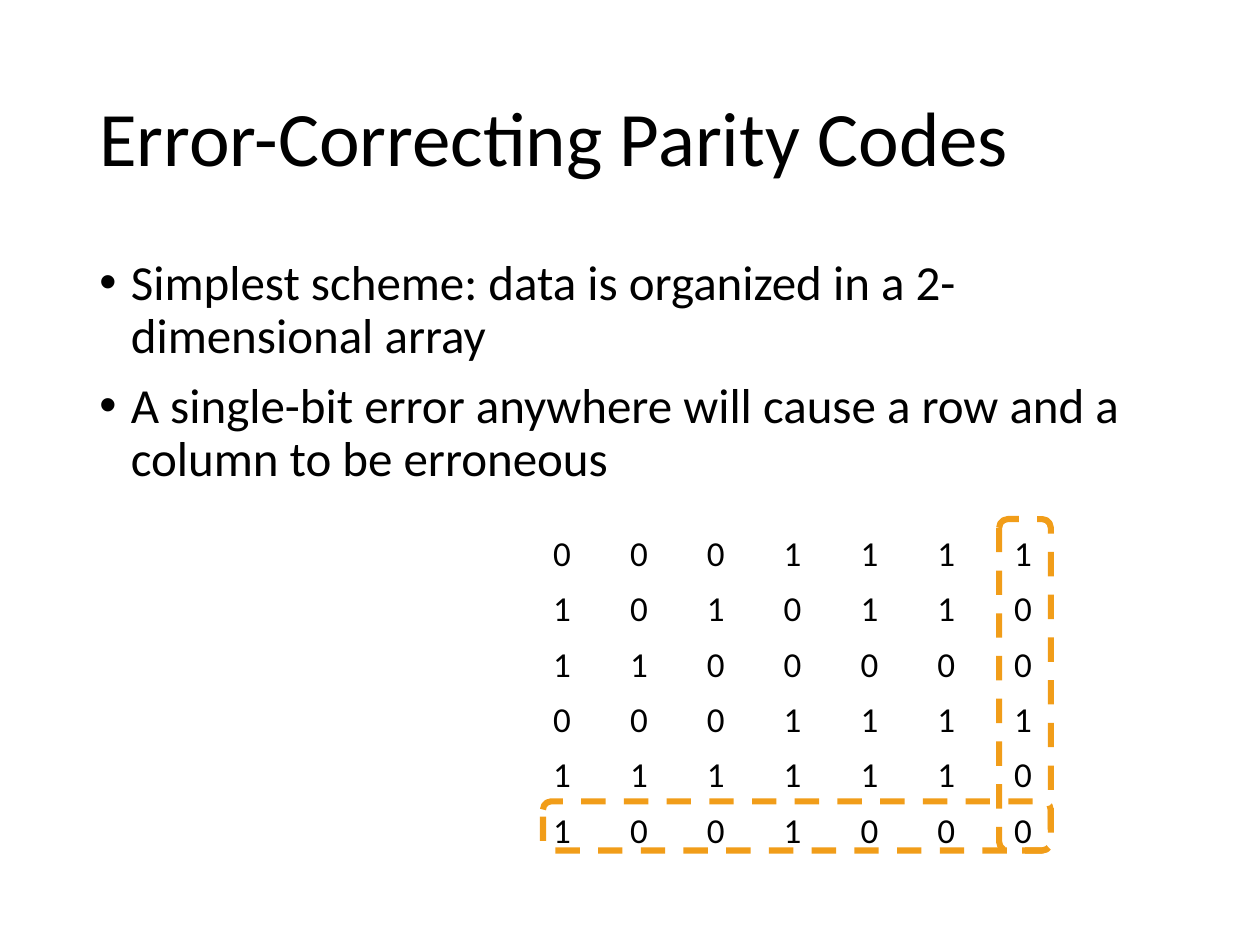
from dataclasses import dataclass

from lxml import etree
from pptx import Presentation
from pptx.dml.color import RGBColor
from pptx.enum.dml import MSO_LINE
from pptx.enum.shapes import MSO_SHAPE
from pptx.enum.text import MSO_ANCHOR
from pptx.oxml.ns import qn
from pptx.util import Inches, Pt

ROUND = MSO_SHAPE.ROUNDED_RECTANGLE
DASH = MSO_LINE.DASH
MIDDLE = MSO_ANCHOR.MIDDLE
TOP = MSO_ANCHOR.TOP
NO_GRID = "{2D5ABB26-0587-4C30-8999-92F81FD0307C}"


@dataclass(frozen=True)
class Theme:
    font: str = "Calibri"
    ink: RGBColor = RGBColor(0, 0, 0)
    paper: RGBColor = RGBColor(255, 255, 255)
    accent: RGBColor = RGBColor(0xF1, 0x9D, 0x19)
    title: int = 44
    body: int = 28
    cell: int = 20
    line: float = 3.5


THEME = Theme()
WIDTH, HEIGHT = 10, 7.5
MARGIN = 0.69
LEFT, UPPER = 4.29, 4.18
COL, ROW = 0.61, 0.44

TITLE = "Error-Correcting Parity Codes"
POINTS = [
    "Simplest scheme: data is organized in a 2-dimensional array",
    "A single-bit error anywhere will cause a row and a column to be erroneous",
]
BITS = ["0001111", "1010110", "1100000", "0001111", "1111110", "1001000"]


def style(para, size):
    for run in para.runs:
        run.font.name = THEME.font
        run.font.size = Pt(size)
        run.font.color.rgb = THEME.ink


def bullet(para):
    props = para._p.get_or_add_pPr()
    props.set("marL", str(Inches(0.25)))
    props.set("indent", str(-Inches(0.25)))
    etree.SubElement(props, qn("a:buFont"), typeface="Arial")
    etree.SubElement(props, qn("a:buChar"), char="•")


def add_text(slide, lines, top, height, size, anchor):
    """Add a box between the side margins and return its paragraphs."""
    box = slide.shapes.add_textbox(
        Inches(MARGIN), Inches(top), Inches(WIDTH - 2 * MARGIN), Inches(height))
    frame = box.text_frame
    frame.word_wrap = True
    frame.vertical_anchor = anchor
    frame.text = "\n".join(lines)
    for para in frame.paragraphs:
        para.line_spacing = 0.9
        style(para, size)
    return frame.paragraphs


def add_ring(slide, left, top, right, base, fill=None):
    """Add a dashed outline between four edges."""
    ring = slide.shapes.add_shape(
        ROUND, Inches(left), Inches(top), Inches(right - left), Inches(base - top))
    ring.shadow.inherit = False
    if fill is None:
        ring.fill.background()
    else:
        ring.fill.solid()
        ring.fill.fore_color.rgb = fill
    ring.line.color.rgb = THEME.accent
    ring.line.width = Pt(THEME.line)
    ring.line.dash_style = DASH


def add_bits(slide, rows):
    count = len(rows[0])
    table = slide.shapes.add_table(
        len(rows), count, Inches(LEFT), Inches(UPPER),
        Inches(COL * count), Inches(ROW * len(rows))).table
    table.first_row = table.horz_banding = False
    table._tbl.tblPr.find(qn("a:tableStyleId")).text = NO_GRID
    for r, bits in enumerate(rows):
        for c, bit in enumerate(bits):
            cell = table.cell(r, c)
            cell.fill.background()
            cell.text_frame.text = bit
            style(cell.text_frame.paragraphs[0], THEME.cell)


def main():
    deck = Presentation()
    deck.slide_width, deck.slide_height = Inches(WIDTH), Inches(HEIGHT)
    slide = deck.slides.add_slide(deck.slide_layouts[6])

    add_text(slide, [TITLE], 0.4, 1.45, THEME.title, MIDDLE)
    for para in add_text(slide, POINTS, 2, 4.76, THEME.body, TOP):
        para.space_before = Pt(10)
        bullet(para)

    right = LEFT + 6 * COL + 0.39
    base = UPPER + len(BITS) * ROW - 0.07
    add_ring(slide, right - 0.41, UPPER - 0.06, right, base, THEME.paper)
    add_ring(slide, LEFT + 0.02, base - 0.39, right, base)
    add_bits(slide, BITS)
    deck.save("out.pptx")


if __name__ == "__main__":
    main()
